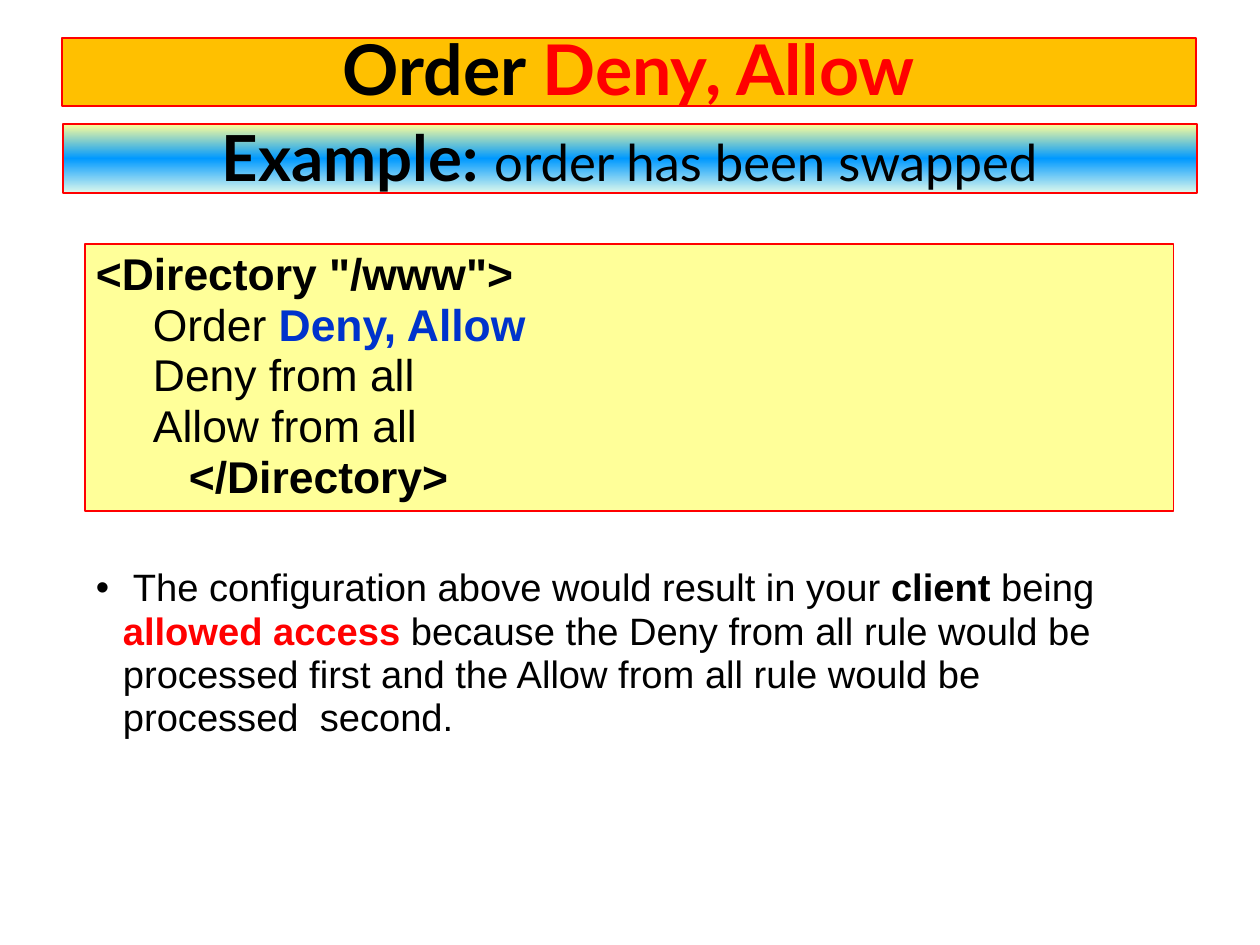
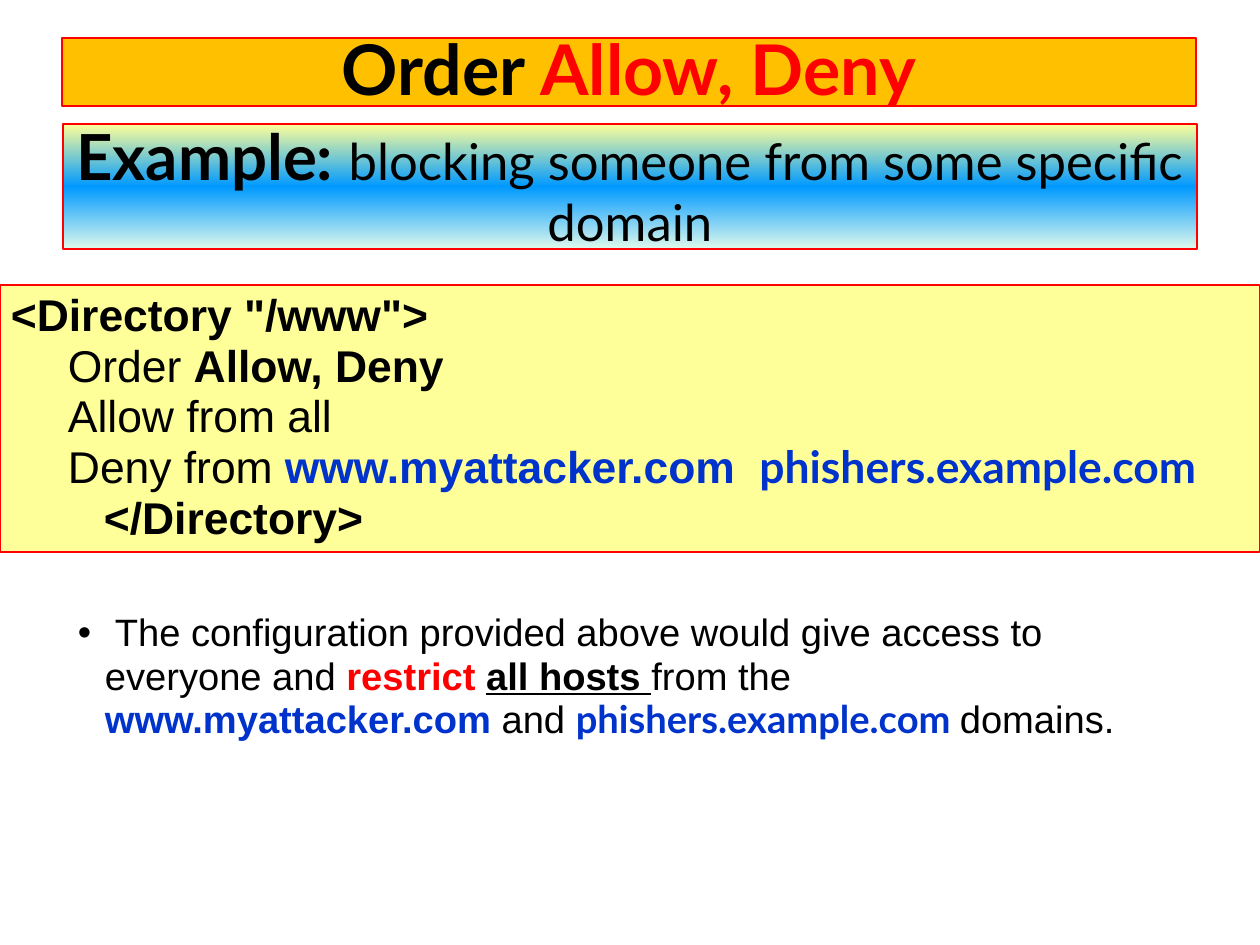
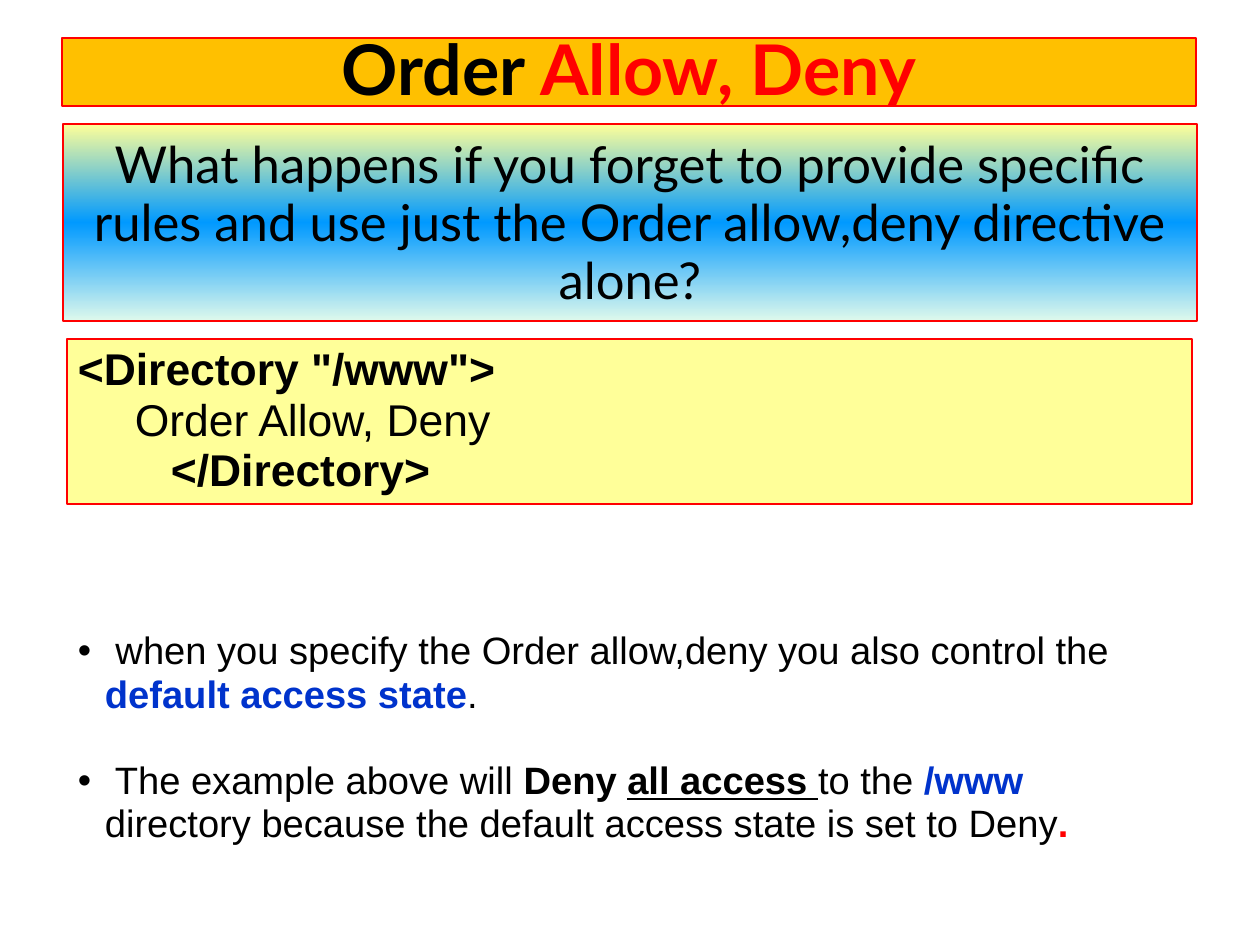
from copy import deepcopy

from pptx import Presentation
from pptx.dml.color import RGBColor
from pptx.enum.shapes import MSO_SHAPE
from pptx.enum.text import MSO_ANCHOR, PP_ALIGN
from pptx.oxml.ns import qn
from pptx.util import Emu, Pt
from lxml import etree

RECTANGLE = MSO_SHAPE.RECTANGLE
TOP, MIDDLE = MSO_ANCHOR.TOP, MSO_ANCHOR.MIDDLE
LEFT, CENTER = PP_ALIGN.LEFT, PP_ALIGN.CENTER

BLACK = RGBColor(0x00, 0x00, 0x00)
RED = RGBColor(0xFF, 0x00, 0x00)
BLUE = RGBColor(0x00, 0x33, 0xCC)
ORANGE = RGBColor(0xFF, 0xC0, 0x00)
PALE_YELLOW = RGBColor(0xFF, 0xFF, 0x99)
SKY = RGBColor(0x00, 0x99, 0xFF)
MINT = RGBColor(0xDE, 0xF9, 0xEC)
BAND_STOPS = ((0, PALE_YELLOW), (0.5, SKY), (1, MINT))

SLIDE_W, SLIDE_H = 1260, 945
BAND_LEFT, BAND_W = 63, 1134
TITLE_TOP, TITLE_H = 38, 68
BAND_TOP = 124
INSET_X, INSET_Y = 11, 6
CODE_INDENT, CODE_CLOSE_INDENT = 57, 93
BULLET_INDENT = 27
LINE_SPACING = 0.95

# Run formats
TITLE = {"name": "Lato", "size": Pt(44), "bold": True}
LEAD = {"name": "Lato", "size": Pt(40), "bold": True}
TOPIC = {"name": "Lato", "size": Pt(32)}
CODE = {"name": "Arial", "size": Pt(28)}
BODY = {"name": "Arial", "size": Pt(24)}
BOLD = {"bold": True}
UNDERLINED = {"bold": True, "underline": True}
RED_BOLD = {"bold": True, "color": RED}
BLUE_BOLD = {"bold": True, "color": BLUE}
BLUE_HOST = {"bold": True, "color": BLUE, "name": "Lato"}


def px(length):
    return Emu(length * 8000)


class Deck:
    def __init__(self):
        self.prs = Presentation()
        self.prs.slide_width, self.prs.slide_height = px(SLIDE_W), px(SLIDE_H)
        self.slide = None

    def start_slide(self):
        self.slide = self.prs.slides.add_slide(self.prs.slide_layouts[6])

    def frame(self, shape, anchor, insets):
        frame = shape.text_frame
        left, top, right, bottom = map(px, insets)
        settings = {"word_wrap": True, "vertical_anchor": anchor,
                    "margin_left": left, "margin_top": top,
                    "margin_right": right, "margin_bottom": bottom}
        for key, value in settings.items():
            setattr(frame, key, value)
        return frame

    def box(self, area, line_width, anchor, insets):
        shape = self.slide.shapes.add_shape(RECTANGLE, *map(px, area))
        shape.shadow.inherit = False
        shape.line.color.rgb = RED
        shape.line.width = Pt(line_width)
        return shape, self.frame(shape, anchor, insets)

    def add_runs(self, paragraph, runs, base, align=LEFT):
        paragraph.alignment = align
        paragraph.line_spacing = LINE_SPACING
        for text, *extra in runs:
            run = paragraph.add_run()
            run.text = text
            style = {"color": BLACK, **base, **(extra[0] if extra else {})}
            run.font.color.rgb = style.pop("color")
            for key, value in style.items():
                setattr(run.font, key, value)

    def indent(self, paragraph, margin, first=0):
        properties = paragraph._p.get_or_add_pPr()
        properties.set("marL", str(px(margin)))
        properties.set("indent", str(px(first)))
        return properties

    def title(self, *runs):
        shape, frame = self.box((BAND_LEFT - 1, TITLE_TOP, BAND_W, TITLE_H),
                                0.75, MIDDLE, (0, 0, 0, 0))
        shape.fill.solid()
        shape.fill.fore_color.rgb = ORANGE
        self.add_runs(frame.paragraphs[0], runs, TITLE, CENTER)

    def topic(self, height, *runs):
        shape, frame = self.box((BAND_LEFT, BAND_TOP, BAND_W, height),
                                1.5, MIDDLE, (0, 3, 0, 0))
        shape.fill.gradient()
        shape.fill.gradient_angle = 270
        stops = shape.element.spPr.find(".//" + qn("a:gsLst"))
        stops.append(deepcopy(stops[-1]))
        for stop, (position, color) in zip(shape.fill.gradient_stops, BAND_STOPS):
            stop.position = position
            stop.color.rgb = color
        self.add_runs(frame.paragraphs[0], runs, TOPIC, CENTER)

    def directory(self, area, *directives):
        shape, frame = self.box(area, 0.75, TOP,
                                (INSET_X, INSET_Y, INSET_X, INSET_Y))
        shape.fill.solid()
        shape.fill.fore_color.rgb = PALE_YELLOW
        lines = [(0, [('<Directory "/www">', BOLD)])]
        lines += [(CODE_INDENT, runs) for runs in directives]
        lines.append((CODE_CLOSE_INDENT, [("</Directory>", BOLD)]))
        for number, (margin, runs) in enumerate(lines):
            paragraph = frame.add_paragraph() if number else frame.paragraphs[0]
            self.indent(paragraph, margin)
            self.add_runs(paragraph, runs, CODE)

    def bullets(self, area, *items):
        shape = self.slide.shapes.add_textbox(*map(px, area))
        frame = self.frame(shape, TOP, (INSET_X, INSET_Y, INSET_X, INSET_Y))
        for number, runs in enumerate(items):
            paragraph = frame.add_paragraph() if number else frame.paragraphs[0]
            properties = self.indent(paragraph, BULLET_INDENT, -BULLET_INDENT)
            color = etree.SubElement(properties, qn("a:buClr"))
            etree.SubElement(color, qn("a:srgbClr"), val=str(BLACK))
            etree.SubElement(properties, qn("a:buFont"), typeface="Arial")
            etree.SubElement(properties, qn("a:buChar"), char="•")
            if number:
                paragraph.space_before = Pt(27)
            self.add_runs(paragraph, runs, BODY)


def main():
    deck = Deck()

    # Deny first, then allow
    deck.start_slide()
    deck.title(("Order ",), ("Deny, Allow", RED_BOLD))
    deck.topic(69, ("Example: ", LEAD), ("order has been swapped",))
    deck.directory((85, 244, 1089, 267),
                   [("Order",), (" Deny, Allow", BLUE_BOLD)],
                   [("Deny from all",)],
                   [("Allow from all",)])
    deck.bullets((85, 561, 1089, 187), [
        (" The configuration above would result in your ",),
        ("client", BOLD), (" being ",), ("allowed access ", RED_BOLD),
        ("because the Deny from all rule would be processed first and the "
         "Allow from all rule would be processed  second.",)])

    # Blocking a domain
    deck.start_slide()
    deck.title(("Order",), (" Allow, Deny", RED_BOLD))
    deck.topic(125, ("Example: ", LEAD),
               ("blocking someone from some specific domain",))
    deck.directory((0, 285, SLIDE_W, 267),
                   [("Order ",), ("Allow, Deny", BOLD)],
                   [("Allow from all",)],
                   [("Deny from ",), ("www.myattacker.com  ", BLUE_BOLD),
                    ("phishers.example.com", BLUE_HOST)])
    deck.bullets((67, 606, 1117, 143), [
        (" The configuration provided above would give access to everyone and ",),
        ("restrict ", RED_BOLD), ("all hosts ", UNDERLINED), ("from the ",),
        ("www.myattacker.com", BLUE_BOLD), (" and ",),
        ("phishers.example.com ", BLUE_HOST), ("domains.",)])

    # Default access state
    deck.start_slide()
    deck.title(("Order",), (" Allow, Deny", RED_BOLD))
    deck.topic(197, ("What happens if you forget to provide specific rules and "
                     "use just the Order allow,deny directive alone?",))
    deck.directory((67, 339, 1125, 165), [("Order Allow, Deny",)])
    deck.bullets(
        (67, 624, 1117, 231),
        [(" when you specify the Order allow,deny you also control the ",),
         ("default access state", BLUE_BOLD), (".",)],
        [(" The example above will ",), ("Deny ", BOLD),
         ("all access ", UNDERLINED), ("to the ",), ("/www ", BLUE_BOLD),
         ("directory because the default access state is set to Deny",),
         (".", RED_BOLD)])

    deck.prs.save("out.pptx")


if __name__ == "__main__":
    main()
